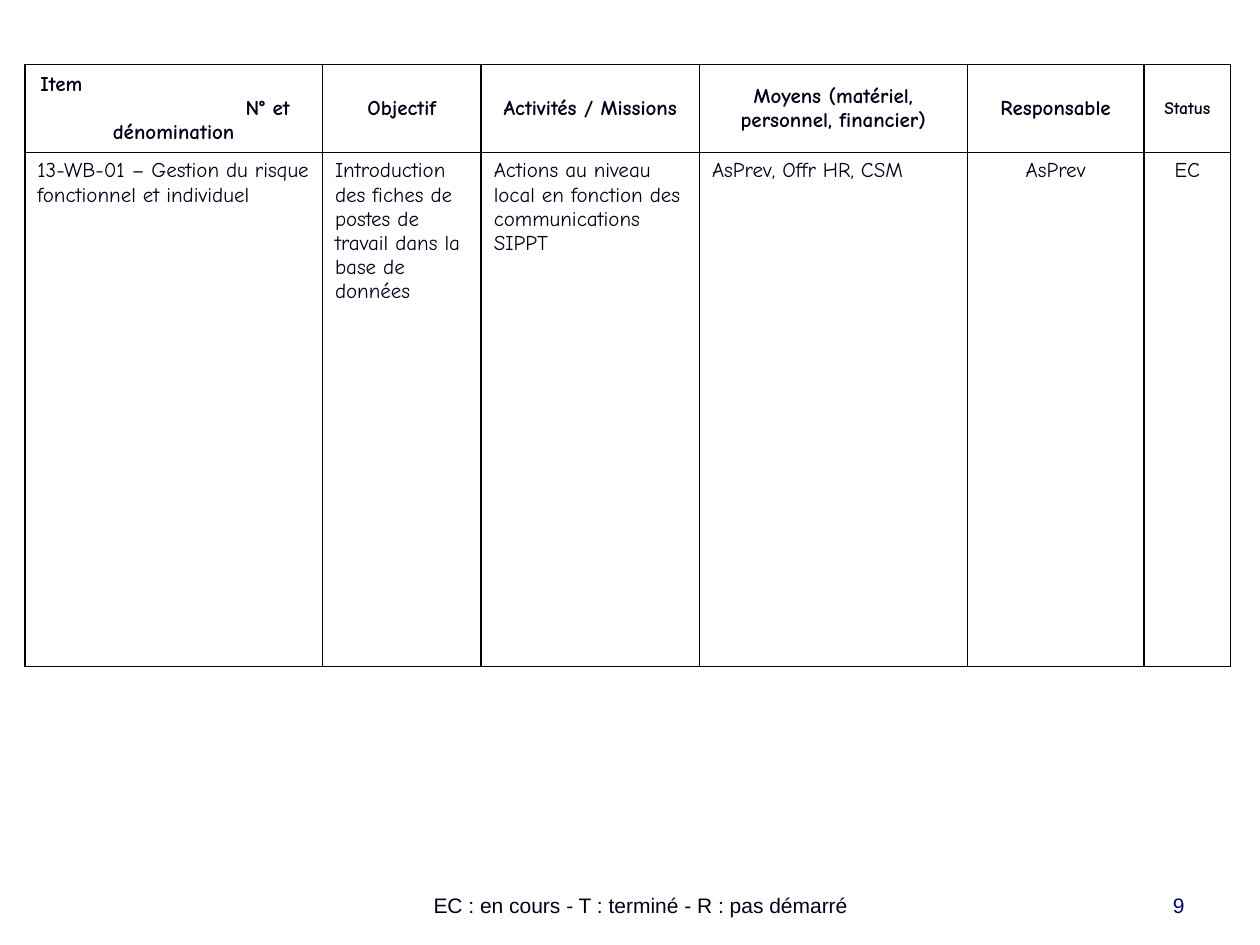
from dataclasses import dataclass

from lxml import etree
from pptx import Presentation
from pptx import util as u
from pptx.dml.color import RGBColor
from pptx.enum import text as t
from pptx.oxml.ns import qn

LEFT, CENTER, RIGHT = t.PP_ALIGN.LEFT, t.PP_ALIGN.CENTER, t.PP_ALIGN.RIGHT


@dataclass(frozen=True)
class Theme:
    ink: str = "000018"
    number: str = "000080"
    table_font: str = "Comic Neue"
    footer_font: str = "Arial"
    body: int = 12
    small: int = 10
    border: int = 1


def write(paragraph, content, *, font, color, size, bold=False, align=LEFT, indent=0):
    paragraph.alignment = align
    if indent:
        properties = paragraph._p.get_or_add_pPr()
        properties.set("marL", str(u.Cm(indent)))
        properties.set("indent", "0")
    run = paragraph.add_run()
    run.text = content
    run.font.name = font
    run.font.size = u.Pt(size)
    run.font.bold = bold
    run.font.color.rgb = RGBColor.from_string(color)


class SlideBuilder:
    def __init__(self, slide, theme):
        self.slide = slide
        self.theme = theme

    def footer(self, content, left, width, align, color):
        box = self.slide.shapes.add_textbox(
            u.Cm(left), u.Cm(17.35), u.Cm(width), u.Cm(1.27))
        frame = box.text_frame
        frame.word_wrap = True
        frame.vertical_anchor = t.MSO_ANCHOR.BOTTOM
        write(frame.paragraphs[0], content, font=self.theme.footer_font,
              color=color, size=self.theme.body, align=align)

    def table(self, left, top, widths, heights):
        table = self.slide.shapes.add_table(
            len(heights), len(widths), u.Cm(left), u.Cm(top),
            u.Cm(sum(widths)), u.Cm(sum(heights))).table
        table.first_row = table.horz_banding = False
        for column, width in zip(table.columns, widths):
            column.width = u.Cm(width)
        for row, height in zip(table.rows, heights):
            row.height = u.Cm(height)
        return table

    def cell(self, cell, lines, anchor, bold=False):
        cell.fill.background()
        self.borders(cell)
        cell.vertical_anchor = anchor
        frame = cell.text_frame
        for index, (content, style) in enumerate(lines):
            paragraph = frame.add_paragraph() if index else frame.paragraphs[0]
            style = {"size": self.theme.body, **style}
            write(paragraph, content, font=self.theme.table_font,
                  color=self.theme.ink, bold=bold, **style)

    def borders(self, cell):
        properties = cell._tc.get_or_add_tcPr()
        for index, side in enumerate(("a:lnL", "a:lnR", "a:lnT", "a:lnB")):
            line = etree.Element(qn(side), w=str(u.Pt(self.theme.border)))
            fill = etree.SubElement(line, qn("a:solidFill"))
            etree.SubElement(fill, qn("a:srgbClr"), val=self.theme.ink)
            properties.insert(index, line)


def main():
    theme = Theme()
    deck = Presentation()
    deck.slide_width, deck.slide_height = u.Cm(25.4), u.Cm(19.05)
    builder = SlideBuilder(deck.slides.add_slide(deck.slide_layouts[6]), theme)

    centered = {"align": CENTER}
    headings = [
        [("Item", {"indent": 0.06}), ("N° et", {"indent": 4.2}),
         ("dénomination", centered)],
        [("Objectif", centered)],
        [("Activités / Missions", centered)],
        [("Moyens (matériel, personnel, financier)", centered)],
        [("Responsable", centered)],
        [("Status", {"align": CENTER, "size": theme.small})],
    ]
    action = [
        [("13-WB-01 – Gestion du risque fonctionnel et individuel", {})],
        [("Introduction des fiches de postes de travail dans la base de données", {})],
        [("Actions au niveau local en fonction des communications SIPPT", {})],
        [("AsPrev, Offr HR, CSM", {})],
        [("AsPrev", centered)],
        [("EC", centered)],
    ]

    builder.footer("EC : en cours - T : terminé - R : pas démarré",
                   5.92, 14, CENTER, theme.ink)
    plan = builder.table(0.5, 1.3, [6, 3.2, 4.4, 5.4, 3.56, 1.75], [1.7, 10.36])
    for column, (heading, detail) in enumerate(zip(headings, action)):
        builder.cell(plan.cell(0, column), heading, t.MSO_ANCHOR.MIDDLE, bold=True)
        builder.cell(plan.cell(1, column), detail, t.MSO_ANCHOR.TOP)
    builder.footer("9", 18.21, 5.92, RIGHT, theme.number)

    deck.save("out.pptx")


if __name__ == "__main__":
    main()
